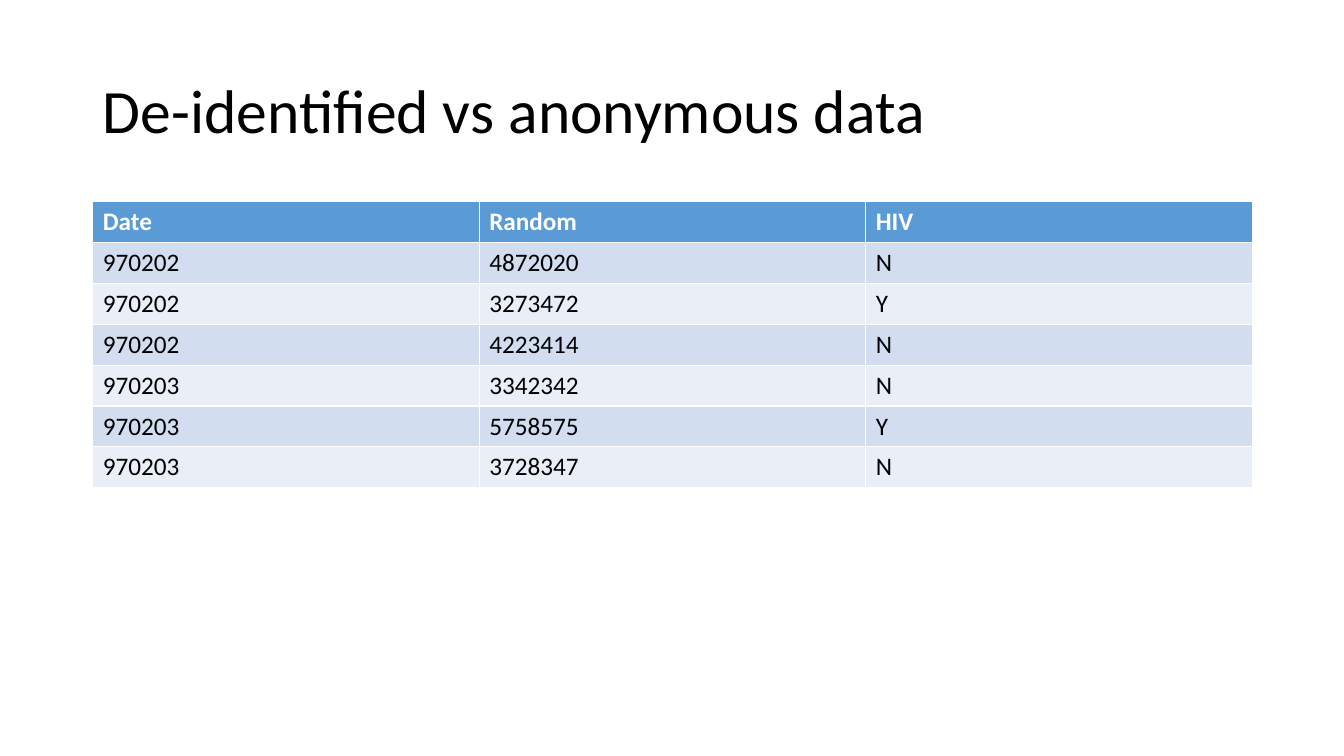
from pptx import Presentation
from pptx.dml.color import RGBColor
from pptx.enum.text import MSO_ANCHOR, PP_ALIGN
from pptx.util import Inches, Pt


def style_paragraph(paragraph, size, color, bold=False):
    paragraph.font.name = "Calibri"
    paragraph.font.size = Pt(size)
    paragraph.font.bold = bold
    paragraph.font.color.rgb = RGBColor.from_string(color)


presentation = Presentation()
presentation.slide_width = Inches(13.33)
presentation.slide_height = Inches(7.5)
title_only_layout = presentation.slide_layouts[5]
slide = presentation.slides.add_slide(title_only_layout)

title = slide.shapes.title
title.left, title.top = Inches(0.92), Inches(0.4)
title.width, title.height = Inches(11.5), Inches(1.45)
title.text_frame.text = "De-identified vs anonymous data"
title.text_frame.vertical_anchor = MSO_ANCHOR.MIDDLE
title_paragraph = title.text_frame.paragraphs[0]
title_paragraph.alignment = PP_ALIGN.LEFT
title_paragraph.line_spacing = 0.9
style_paragraph(title_paragraph, 44, "000000")

records = [
    ("Date", "Random", "HIV"),
    ("970202", "4872020", "N"),
    ("970202", "3273472", "Y"),
    ("970202", "4223414", "N"),
    ("970203", "3342342", "N"),
    ("970203", "5758575", "Y"),
    ("970203", "3728347", "N"),
]
HEADER_FILL = "5B9BD5"
BAND_FILLS = ("EAEFF7", "D2DEEF")

# The default table style supplies the white cell borders.
table = slide.shapes.add_table(
    len(records), len(records[0]),
    Inches(0.92), Inches(2), Inches(11.5), Inches(2.84),
).table

for row_index, record in enumerate(records):
    is_header = row_index == 0
    fill_color = HEADER_FILL if is_header else BAND_FILLS[row_index % 2]
    text_color = "FFFFFF" if is_header else "000000"
    for column_index, value in enumerate(record):
        cell = table.cell(row_index, column_index)
        cell.text = value
        cell.fill.solid()
        cell.fill.fore_color.rgb = RGBColor.from_string(fill_color)
        style_paragraph(cell.text_frame.paragraphs[0], 18, text_color, is_header)

presentation.save("out.pptx")
